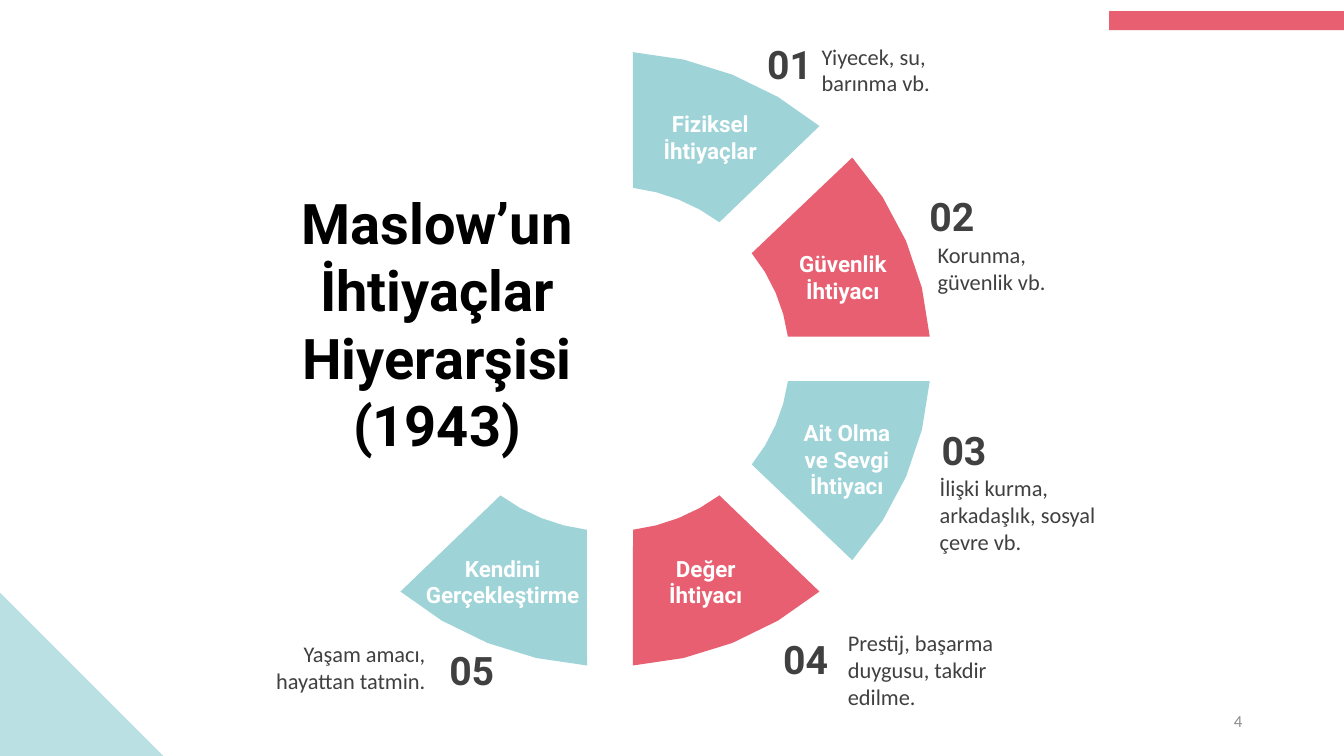
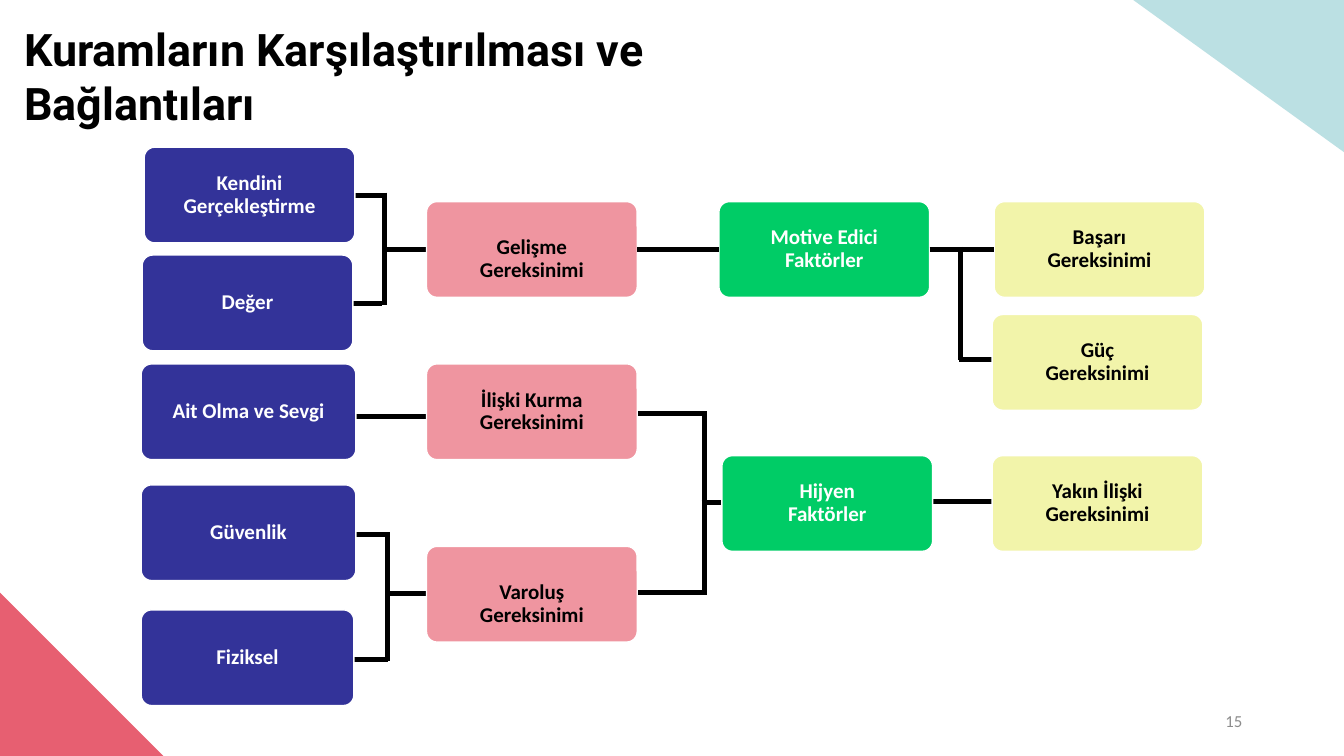
from math import cos, radians, sin

from lxml.etree import SubElement
from pptx import Presentation
from pptx.dml.color import RGBColor
from pptx.enum.shapes import MSO_CONNECTOR, MSO_SHAPE
from pptx.enum.text import MSO_ANCHOR, PP_ALIGN
from pptx.oxml.ns import qn
from pptx.util import Inches, Pt

COLORS = {
    "aqua": "9ED3D7", "pale_aqua": "BBE0E3", "coral": "E75F71", "pink": "EF95A0",
    "navy": "333399", "green": "00CC66", "yellow": "F2F4AA",
    "black": "000000", "white": "FFFFFF", "dark": "404040", "gray": "8C8C8C",
}
HEADING_FONT, BODY_FONT = "Roboto", "Calibri"
LEFT, CENTER, RIGHT = PP_ALIGN.LEFT, PP_ALIGN.CENTER, PP_ALIGN.RIGHT
LEFT_SIDE, RIGHT_SIDE = 1, 3

# Ring of needs: centre and (horizontal, vertical) radii in inches
RING_CENTER = (6.05, 3.56)
OUTER_RADII, INNER_RADII = (3.18, 3.05), (1.78, 1.71)
ARC_STEPS = 4
# Outer and inner arc angles of the segments by the vertical and horizontal axes
UPRIGHT = ((85.9, 49.2), (82.6, 52.4))
SIDEWAYS = ((40.9, 4.15), (37.8, 7.4))

# (arc angles, x direction, y direction, colour, label, label box)
SEGMENTS = [
    (UPRIGHT, 1, -1, "aqua", "Fiziksel İhtiyaçlar", (6.38, 1.04, 1.33, 0.64)),
    (SIDEWAYS, 1, -1, "coral", "Güvenlik İhtiyacı", (7.78, 2.43, 1.16, 0.64)),
    (SIDEWAYS, 1, 1, "aqua", "Ait Olma ve Sevgi İhtiyacı", (7.78, 4.1, 1.24, 0.91)),
    (UPRIGHT, 1, 1, "coral", "Değer İhtiyacı", (6.38, 5.45, 1.24, 0.64)),
    (UPRIGHT, -1, 1, "aqua", "Kendini Gerçekleştirme", (4.09, 5.45, 1.79, 0.64)),
]
# (number, number position, description, description position, height, alignment)
NOTES = [
    ("01", (7.51, 0.35), "Yiyecek, su, barınma vb.", (8.15, 0.42), 0.54, LEFT),
    ("02", (9.12, 1.86), "Korunma, güvenlik vb.", (9.3, 2.39), 0.54, LEFT),
    ("03", (9.24, 4.18), "İlişki kurma, arkadaşlık, sosyal çevre vb.",
     (9.32, 4.7), 0.81, LEFT),
    ("04", (7.67, 6.25), "Prestij, başarma duygusu, takdir edilme.",
     (8.41, 6.24), 0.81, LEFT),
    ("05", (4.34, 6.36), "Yaşam amacı, hayattan tatmin.", (2.56, 6.35), 0.54, RIGHT),
]

BOX_WIDTH, BOX_HEIGHT = 2.09, 0.95
# Column: (fill, text colour, side inset); box: (key, text, left, top, width, text drop)
COLUMNS = [
    (("navy", "white", 0.09), [
        ("self", "Kendini Gerçekleştirme", 1.43, 1.46, BOX_WIDTH, 0),
        ("esteem", "Değer", 1.41, 2.53, BOX_WIDTH, 0),
        ("love", "Ait Olma ve Sevgi", 1.4, 3.61, 2.13, 0),
        ("safety", "Güvenlik", 1.4, 4.81, 2.13, 0),
        ("physical", "Fiziksel", 1.4, 6.05, 2.11, 0),
    ]),
    (("pink", "black", 0.48), [
        ("growth", "Gelişme Gereksinimi", 4.23, 2, BOX_WIDTH, 0.1),
        ("relation", "İlişki Kurma Gereksinimi", 4.23, 3.61, BOX_WIDTH, 0),
        ("existence", "Varoluş Gereksinimi", 4.23, 5.42, BOX_WIDTH, 0.1),
    ]),
    (("green", "white", 0.48), [
        ("motivators", "Motive Edici Faktörler", 7.13, 2, BOX_WIDTH, 0),
        ("hygiene", "Hijyen Faktörler", 7.16, 4.52, BOX_WIDTH, 0),
    ]),
    (("yellow", "black", 0.48), [
        ("success", "Başarı Gereksinimi", 9.86, 2, BOX_WIDTH, 0),
        ("power", "Güç Gereksinimi", 9.84, 3.12, BOX_WIDTH, 0),
        ("affiliation", "Yakın İlişki Gereksinimi", 9.84, 4.52, BOX_WIDTH, 0),
    ]),
]
# Links that run from the middle of one box side to the middle of another
DIRECT_LINKS = [("growth", "motivators"), ("motivators", "success")]
# Lines that run on behind the boxes: (left, y, length) and (x, top, length)
BRANCH = 1.06
LEVEL_LINES = [
    (2.75, 1.94, BRANCH), (2.73, 3.01, BRANCH), (3.79, 2.48, BRANCH),
    (3.33, 4.13, BRANCH),
    (2.81, 5.3, BRANCH), (2.7, 6.54, 1.15), (3.85, 5.89, BRANCH),
    (5.95, 4.1, BRANCH), (5.86, 5.88, 1.15), (6.96, 4.99, BRANCH),
    (9, 4.98, BRANCH), (9.51, 3.57, BRANCH),
]
UPRIGHT_LINES = [(3.81, 1.91, 1.12), (3.84, 5.28, 1.28),
                 (6.99, 4.09, 1.8), (9.53, 2.45, 1.12)]


def rgb(color):
    return RGBColor.from_string(COLORS[color])


def write(shape, text, size=16, font=BODY_FONT, color="black", bold=False,
          align=LEFT, insets=(0.1, 0.05, 0.1, 0.05), spacing=None):
    frame = shape.text_frame
    frame.word_wrap = True
    frame.vertical_anchor = MSO_ANCHOR.MIDDLE
    (frame.margin_left, frame.margin_top,
     frame.margin_right, frame.margin_bottom) = map(Inches, insets)
    paragraph = frame.paragraphs[0]
    paragraph.alignment = align
    paragraph.line_spacing = spacing
    run = paragraph.add_run()
    run.text = text
    run.font.size, run.font.name, run.font.bold = Pt(size), font, bold
    run.font.color.rgb = rgb(color)


def add_text(slide, text, box, **style):
    write(slide.shapes.add_textbox(*map(Inches, box)), text, **style)


def add_heading(slide, text, box, size, **style):
    add_text(slide, text, box, size=size, font=HEADING_FONT, bold=True, **style)


def paint(shape, fill, line=None):
    shape.shadow.inherit = False
    shape.fill.solid()
    shape.fill.fore_color.rgb = rgb(fill)
    if line:
        shape.line.color.rgb = rgb(line)
        shape.line.width = Pt(1)
    else:
        shape.line.fill.background()


def add_preset(slide, kind, box, fill, line=None):
    shape = slide.shapes.add_shape(kind, *map(Inches, box))
    paint(shape, fill, line)
    return shape


def add_page(deck, number, corner_color):
    """Add a slide with the shared corner triangle and page number."""
    slide = deck.slides.add_slide(deck.slide_layouts[6])
    add_preset(slide, MSO_SHAPE.RIGHT_TRIANGLE, (0, 5.88, 1.62, 1.62), corner_color)
    add_text(slide, str(number), (9.42, 6.95, 3, 0.4), size=12, color="gray",
             align=RIGHT)
    return slide


def arc_points(radii, start, end, x_dir, y_dir):
    points = []
    for step in range(ARC_STEPS + 1):
        angle = radians(start + (end - start) * step / ARC_STEPS)
        points.append((Inches(RING_CENTER[0] + x_dir * radii[0] * cos(angle)),
                       Inches(RING_CENTER[1] + y_dir * radii[1] * sin(angle))))
    return points


def add_segment(slide, angles, x_dir, y_dir, fill):
    (outer_start, outer_end), (inner_start, inner_end) = angles
    outline = (arc_points(OUTER_RADII, outer_start, outer_end, x_dir, y_dir)
               + arc_points(INNER_RADII, inner_end, inner_start, x_dir, y_dir))
    builder = slide.shapes.build_freeform(*outline[0])
    builder.add_line_segments(outline[1:], close=True)
    paint(builder.convert_to_shape(), fill)


def add_line(slide, *ends):
    """Draw a thick line between ends given as x1, y1, x2, y2 in inches."""
    line = slide.shapes.add_connector(MSO_CONNECTOR.STRAIGHT, *map(Inches, ends))
    line.line.color.rgb = rgb("black")
    line.line.width = Inches(0.05)
    SubElement(line._element.spPr, qn("a:effectLst"))
    return line


def link(slide, source, target):
    line = add_line(slide, 0, 0, 0, 0)
    line.begin_connect(source, RIGHT_SIDE)
    line.end_connect(target, LEFT_SIDE)


def build_hierarchy(deck):
    slide = add_page(deck, 4, "pale_aqua")
    add_preset(slide, MSO_SHAPE.RECTANGLE, (11, 0.11, 2.33, 0.19), "coral")
    add_heading(slide, "Maslow’un İhtiyaçlar Hiyerarşisi (1943)",
                (2.51, 1.81, 3.65, 2.79), 40, align=CENTER)
    for angles, x_dir, y_dir, fill, label, label_box in SEGMENTS:
        add_segment(slide, angles, x_dir, y_dir, fill)
        add_heading(slide, label, label_box, 16, color="white", align=CENTER)
    for number, number_at, description, description_at, height, align in NOTES:
        add_heading(slide, number, (*number_at, 0.66, 0.57), 28, color="dark",
                    align=align)
        add_text(slide, description, (*description_at, 1.66, height), color="dark",
                 align=align, insets=(0, 0, 0, 0))


def build_comparison(deck):
    slide = add_page(deck, 15, "coral")
    top_corner = add_preset(slide, MSO_SHAPE.RIGHT_TRIANGLE, (11.24, 0, 2.09, 1.51),
                            "pale_aqua")
    top_corner.rotation = 180
    add_heading(slide, "Kuramların Karşılaştırılması ve Bağlantıları",
                (0.14, 0.16, 6.74, 1.18), 32)
    for left, y, length in LEVEL_LINES:
        add_line(slide, left, y, left + length, y)
    for x, top, length in UPRIGHT_LINES:
        add_line(slide, x, top, x, top + length)
    boxes = {}
    for (fill, color, inset), entries in COLUMNS:
        for key, text, left, top, width, drop in entries:
            box = add_preset(slide, MSO_SHAPE.ROUNDED_RECTANGLE,
                             (left, top, width, BOX_HEIGHT), fill, "white")
            box.adjustments[0] = 0.11
            write(box, text, size=15, color=color, bold=True, align=CENTER,
                  insets=(inset, 0.09 + 2 * drop, inset, 0.09), spacing=0.9)
            boxes[key] = box
    for source, target in DIRECT_LINKS:
        link(slide, boxes[source], boxes[target])


def main():
    deck = Presentation()
    deck.slide_width, deck.slide_height = Inches(13.33), Inches(7.5)
    build_hierarchy(deck)
    build_comparison(deck)
    deck.save("out.pptx")


if __name__ == "__main__":
    main()
